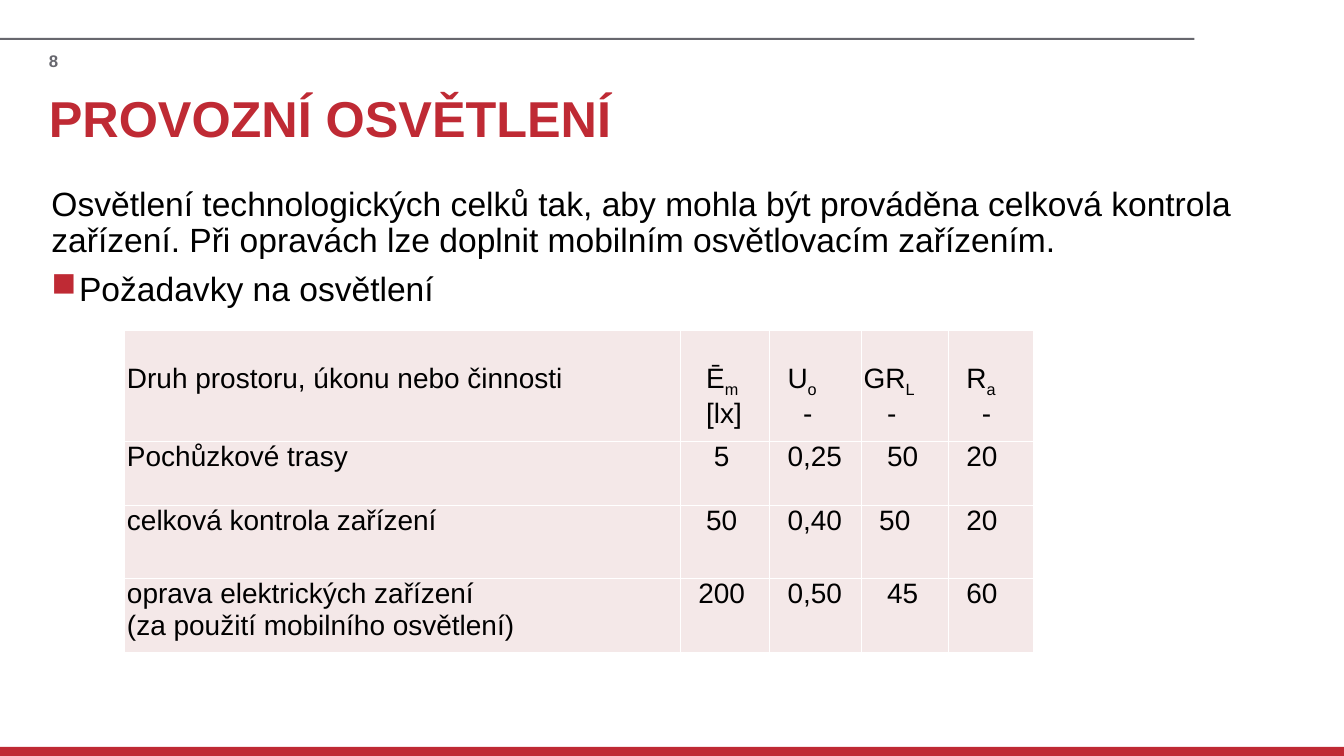
"""Build the slide on operational lighting requirements."""
from lxml import etree
from pptx import Presentation
from pptx.dml.color import RGBColor
from pptx.enum.shapes import MSO_SHAPE
from pptx.enum.text import MSO_ANCHOR
from pptx.oxml.ns import qn
from pptx.util import Pt

RECT = MSO_SHAPE.RECTANGLE
TOP = MSO_ANCHOR.TOP
RED = RGBColor(0xBF, 0x2A, 0x34)
GRAY = RGBColor(0x67, 0x67, 0x6E)
BLACK = RGBColor(0, 0, 0)
WHITE = RGBColor(0xFF, 0xFF, 0xFF)
PINK = RGBColor(0xF4, 0xE8, 0xE8)
FONT = "Arial"
STEP = 11.1

prs = Presentation()
prs.slide_width, prs.slide_height = Pt(1920.24), Pt(1080)
s = prs.slides.add_slide(prs.slide_layouts[6])


def add_run(p, text, size, color, bold=False):
    r = p.add_run()
    r.text = text
    r.font.name, r.font.size, r.font.bold = FONT, Pt(size), bold
    r.font.color.rgb = color
    return r


def add_box(x, y, w, h):
    tf = s.shapes.add_textbox(Pt(x), Pt(y), Pt(w), Pt(h)).text_frame
    tf.word_wrap = True
    tf.vertical_anchor = TOP
    tf.margin_left = tf.margin_right = tf.margin_top = tf.margin_bottom = 0
    return tf


for y, w, h, color in [(1067.04, 1920.24, 12.96, RED), (54, 1706.4, 2.88, GRAY)]:
    sp = s.shapes.add_shape(RECT, 0, Pt(y), Pt(w), Pt(h))
    sp.shadow.inherit = False
    sp.fill.solid()
    sp.fill.fore_color.rgb = color
    sp.line.fill.background()

title = add_box(69.84, 124.56, 1779.84, 118.8)
add_run(title.paragraphs[0], "PROVOZNÍ OSVĚTLENÍ", 72, RED, True)

body = add_box(73.44, 267.84, 1779.84, 180)
intro, bullet = body.paragraphs[0], body.add_paragraph()
pPr = bullet._p.get_or_add_pPr()
pPr.set("marL", str(Pt(39.6)))
pPr.set("indent", str(Pt(-39.6)))
bu_color = etree.SubElement(pPr, qn("a:buClr"))
etree.SubElement(bu_color, qn("a:srgbClr"), val=str(RED))
etree.SubElement(pPr, qn("a:buChar"), char="■")
for p, text in [
    (intro, "Osvětlení technologických celků tak, aby mohla být prováděna celková "
            "kontrola zařízení. Při opravách lze doplnit mobilním osvětlovacím zařízením."),
    (bullet, "Požadavky na osvětlení"),
]:
    p.line_spacing = 0.9
    p.space_after = Pt(18)
    add_run(p, text, 48, BLACK)

number = add_box(69.84, 72.72, 84.96, 28.08)
add_run(number.paragraphs[0], "8", 24, GRAY, True)

# Each line: indent steps, text, optional subscript
ROWS = [
    [[(0, "Druh prostoru, úkonu nebo činnosti")],
     [(3, "Ē", "m"), (3, "[lx]")], [(2, "U", "o"), (4, "-")],
     [(0, "GR", "L"), (3, "-")], [(2, "R", "a"), (4, "-")]],
    [[(0, "Pochůzkové trasy")],
     [(4, "5")], [(2, "0,25")], [(3, "50")], [(2, "20")]],
    [[(0, "celková kontrola zařízení")],
     [(3, "50")], [(2, "0,40")], [(2, "50")], [(2, "20")]],
    [[(0, "oprava elektrických zařízení"), (0, "(za použití mobilního osvětlení)")],
     [(2, "200")], [(2, "0,50")], [(3, "45")], [(2, "60")]],
]
WIDTHS = [794.16, 127.44, 131.04, 124.56, 120.96]
HEIGHTS = [157.68, 91.44, 105.12, 105.12]

table = s.shapes.add_table(len(ROWS), len(WIDTHS), Pt(177.84), Pt(472.32),
                           Pt(sum(WIDTHS)), Pt(sum(HEIGHTS))).table
for col, w in zip(table.columns, WIDTHS):
    col.width = Pt(w)
for i, (row, h) in enumerate(zip(ROWS, HEIGHTS)):
    table.rows[i].height = Pt(h)
    for j, lines in enumerate(row):
        cell = table.cell(i, j)
        cell.margin_left = cell.margin_right = Pt(3.6)
        cell.margin_top = Pt(0 if i else 46)
        cell.margin_bottom = 0
        cell.vertical_anchor = TOP
        tcPr = cell._tc.get_or_add_tcPr()
        for side in ("lnL", "lnR", "lnT", "lnB"):
            ln = etree.SubElement(tcPr, qn(f"a:{side}"), w=str(Pt(1)))
            fill = etree.SubElement(ln, qn("a:solidFill"))
            etree.SubElement(fill, qn("a:srgbClr"), val=str(WHITE))
        cell.fill.solid()
        cell.fill.fore_color.rgb = PINK
        tf = cell.text_frame
        for k, (steps, text, *sub) in enumerate(lines):
            p = tf.add_paragraph() if k else tf.paragraphs[0]
            p._p.get_or_add_pPr().set("marL", str(Pt(steps * STEP)))
            add_run(p, text, 40, BLACK)
            for mark in sub:
                r = add_run(p, mark, 40, BLACK)
                r._r.get_or_add_rPr().set("baseline", "-25000")

prs.save("out.pptx")
